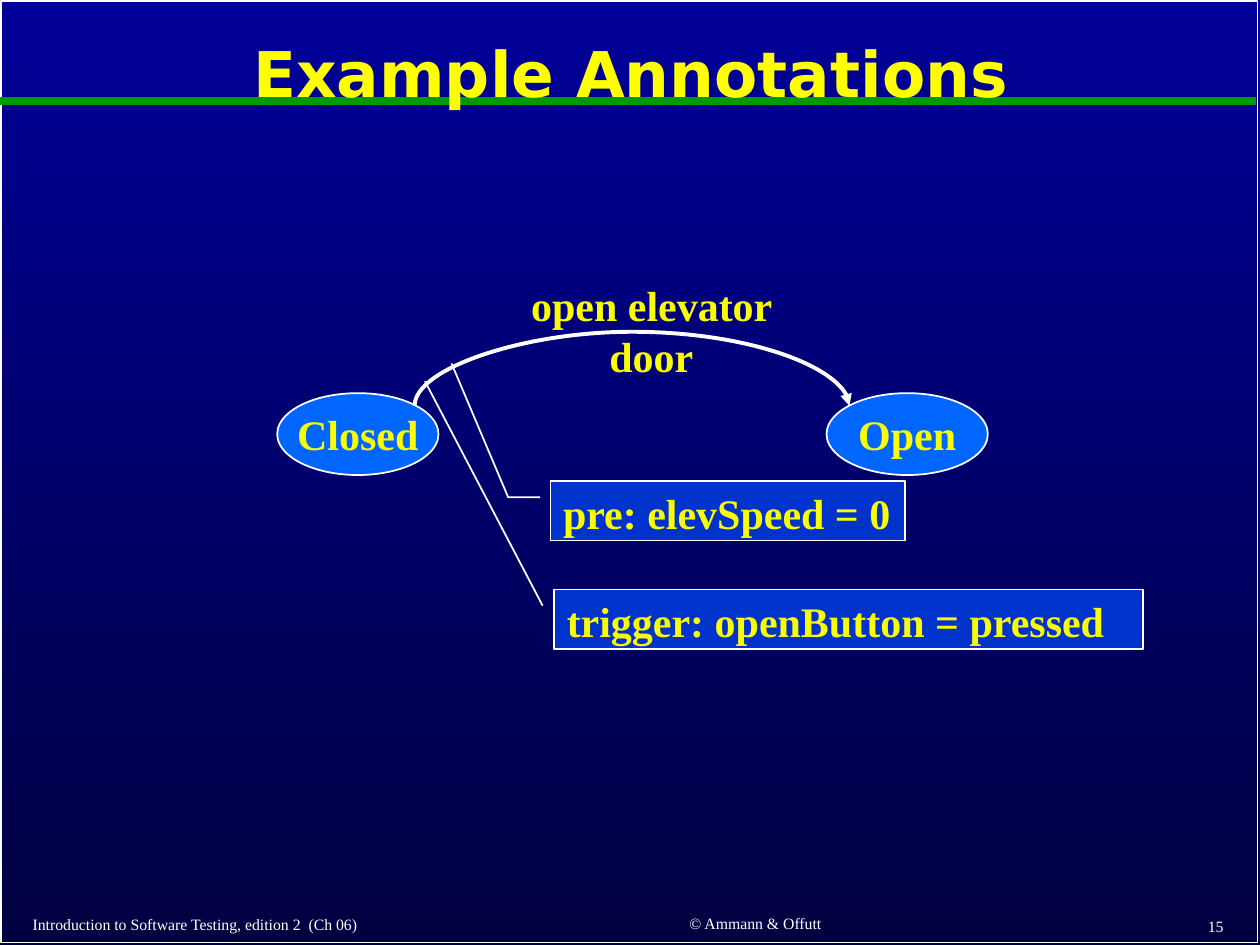
from dataclasses import dataclass
from lxml.etree import SubElement as Sub
from pptx import Presentation
from pptx.dml.color import RGBColor as Rgb
from pptx.enum.shapes import MSO_CONNECTOR as Link, MSO_SHAPE as Kind
from pptx.enum.text import MSO_ANCHOR as Anchor, PP_ALIGN as Align
from pptx.oxml.ns import qn
from pptx.util import Pt

# Content: boxes are left, top, width, height in points
TITLE = "Example Annotations"
STATES = [("Closed", 158.4), ("Open", 472.32)]
EVENT = "open elevator door"
NOTES = [
    ("pre: elevSpeed = 0", (314.64, 275.04, 202.32, 33.84),
     (0.27, -0.03, 0.27, -0.12, -1.99, -0.28)),
    ("trigger: openButton = pressed", (316.8, 336.96, 336.24, 33.84),
     (0.27, -0.02, 0.27, -0.02, -3.52, -0.22)),
]
FOOT = [
    ("Introduction to Software Testing, edition 2  (Ch 06)",
     (11.52, 519.84, 294.48, 16.56), Align.LEFT),
    ("© Ammann & Offutt", (317.52, 519.12, 228.24, 16.56), Align.CENTER),
    ("15", (556.56, 520.56, 149.76, 17.28), Align.RIGHT),
]


@dataclass(frozen=True)
class Theme:
    top: str = "000099"
    base: str = "000040"
    white: str = "FFFFFF"
    green: str = "009900"
    head: str = "FFFF00"
    text: str = "FAFD00"
    state: str = "0066FF"
    note: str = "0033CC"
    sans: str = "DejaVu Sans"
    serif: str = "Times New Roman"
    big: int = 36
    mid: int = 24
    small: int = 9


T = Theme()


def rgb(hue):
    return Rgb.from_string(hue)


def write(shape, text, size, hue, align=Align.LEFT, face=T.serif,
          bold=True, anchor=Anchor.MIDDLE, wrap=True):
    frame = shape.text_frame
    frame.word_wrap = wrap
    frame.vertical_anchor = anchor
    para = frame.paragraphs[0]
    para.text = text
    para.alignment = align
    font = para.font
    font.name, font.size, font.bold = face, Pt(size), bold
    font.color.rgb = rgb(hue)
    return para


def stroke(item, hue=T.white, width=1):
    item.line.color.rgb = rgb(hue)
    item.line.width = Pt(width)


def add_box(slide, kind, box, fill=None):
    shape = slide.shapes.add_shape(kind, *map(Pt, box))
    shape.shadow.inherit = False
    if fill:
        shape.fill.solid()
        shape.fill.fore_color.rgb = rgb(fill)
    else:
        shape.fill.background()
    stroke(shape)
    return shape


def add_text(slide, box, *args, **opts):
    return write(slide.shapes.add_textbox(*map(Pt, box)), *args, **opts)


def add_link(slide, kind, ends, hue, width):
    link = slide.shapes.add_connector(kind, *map(Pt, ends))
    stroke(link, hue, width)
    Sub(link._element.spPr, qn("a:effectLst"))
    return link


def add_arc(slide, left, right, foot, rise):
    """A curve drawn upright, then turned a quarter to bow upwards."""
    mid, half, thin = (left + right) / 2, (right - left) / 2, 0.12
    arc = add_link(slide, Link.CURVE,
                   (mid, foot + half, mid + thin, foot - half), T.white, 2.25)
    props = arc._element.spPr
    props.find(qn("a:xfrm")).set("rot", str(90 * 60000))
    shape = props.find(qn("a:prstGeom"))
    guides = shape.find(qn("a:avLst"))
    if guides is None:
        guides = Sub(shape, qn("a:avLst"))
    bow = round(-rise / thin * 100000)
    Sub(guides, qn("a:gd"), name="adj1", fmla=f"val {bow}")
    Sub(props.find(qn("a:ln")), qn("a:tailEnd"), type="triangle")


def main():
    deck = Presentation()
    deck.slide_width, deck.slide_height = Pt(720), Pt(540)
    slide = deck.slides.add_slide(deck.slide_layouts[6])

    # Background, frame and rule
    fill = slide.background.fill
    fill.gradient()
    fill.gradient_angle = 270
    for stop, hue, at in zip(fill.gradient_stops, (T.top, T.base), (0, 1)):
        stop.color.rgb, stop.position = rgb(hue), at
    add_box(slide, Kind.RECTANGLE, (0.72, 0.72, 717.84, 537.84))
    add_link(slide, Link.STRAIGHT, (0, 57.6, 717.84, 57.6), T.green, 4.5)

    # Title and footer
    head = add_text(slide, (10.8, 7.92, 699.12, 72), TITLE, T.big, T.head,
                    Align.CENTER, T.sans)
    head.line_spacing = 0.9
    for text, box, align in FOOT:
        add_text(slide, box, text, T.small, T.white, align,
                 bold=False, wrap=False)

    # States and the transition between them
    for name, left in STATES:
        oval = add_box(slide, Kind.OVAL, (left, 224.64, 92.16, 46.8), T.state)
        write(oval, name, T.mid, T.text, Align.CENTER, wrap=False)
    add_arc(slide, 236.88, 485.28, 231.84, 44.64)
    add_text(slide, (294.48, 156.24, 155.52, 65.52), EVENT, T.mid, T.text,
             Align.CENTER, anchor=Anchor.TOP)

    # Callouts on the transition
    for text, box, bends in NOTES:
        note = add_box(slide, Kind.LINE_CALLOUT_2, box, T.note)
        for i, bend in enumerate(bends):
            note.adjustments[i] = bend
        write(note, text, T.mid, T.text, anchor=Anchor.TOP)

    deck.save("out.pptx")


if __name__ == "__main__":
    main()
